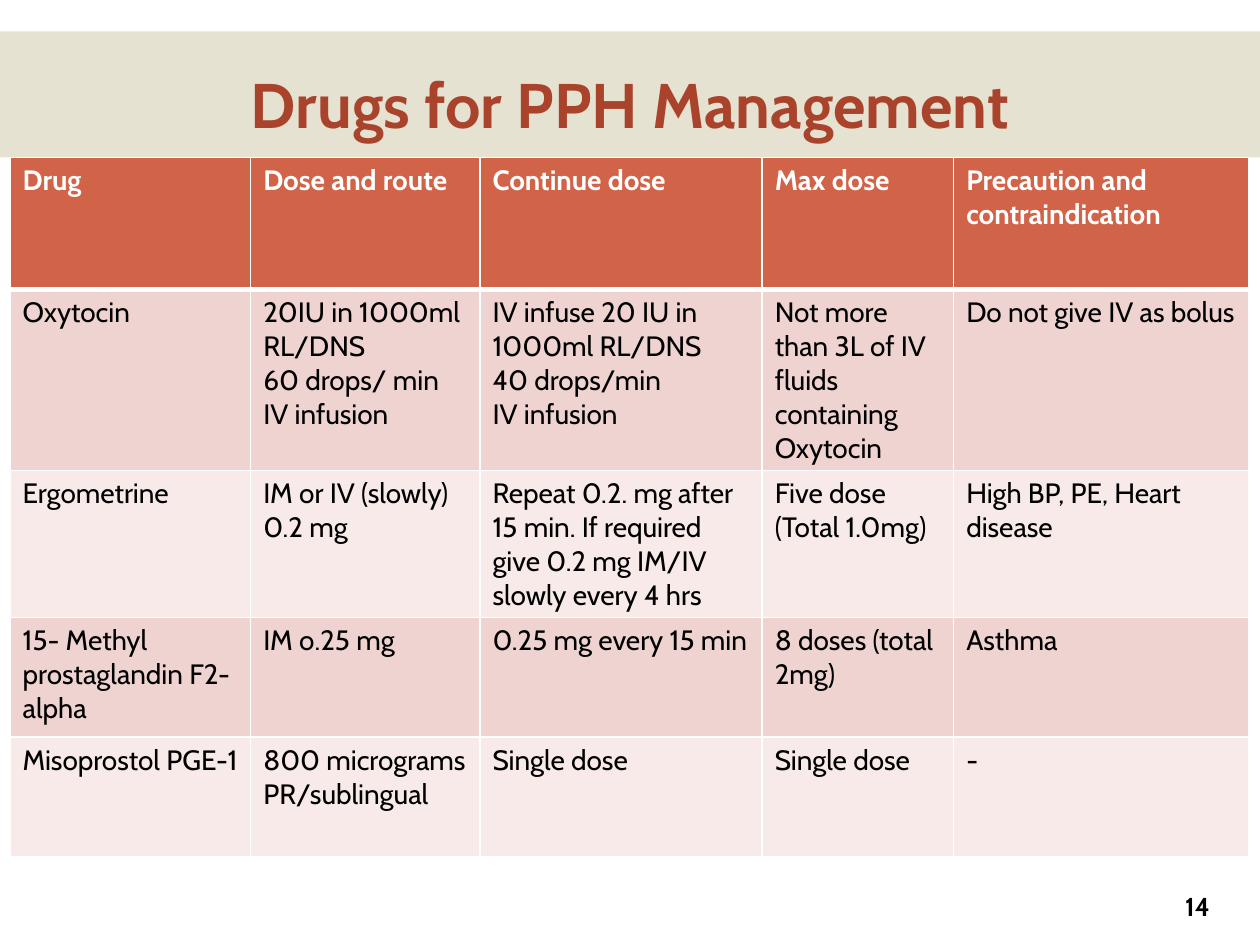
from lxml import etree
from pptx import Presentation
from pptx import util as u
from pptx.dml.color import RGBColor
from pptx.enum import shapes, text
from pptx.oxml import ns

WIDTH, HEIGHT = 10, 7.5
FONT = "Cabin"
WHITE, BLACK = "FFFFFF", "000000"
BAND, TITLE, HEADER = "DDD9C3", "A9432B", "D16349"
STRIPES = ["EED3D0", "F7EAE9"]

COLUMN_WIDTHS = [1.91, 1.82, 2.24, 1.52, 2.34]
ROW_HEIGHTS = [1.05, 1.41, 1.15, 0.95, 0.95]
DRUGS = [
    ["Drug", "Dose and route", "Continue dose", "Max dose",
     "Precaution and contraindication"],
    ["Oxytocin", "20IU in 1000ml RL/DNS\n60 drops/ min\nIV infusion",
     "IV infuse 20 IU in 1000ml RL/DNS\n40 drops/min\nIV infusion",
     "Not more than 3L of IV fluids containing Oxytocin",
     "Do not give IV as bolus"],
    ["Ergometrine", "IM or IV (slowly) 0.2 mg",
     "Repeat 0.2. mg after 15 min. If required give 0.2 mg IM/IV "
     "slowly every 4 hrs",
     "Five dose (Total 1.0mg)", "High BP, PE, Heart disease"],
    ["15- Methyl prostaglandin F2-alpha", "IM o.25 mg",
     "0.25 mg every 15 min", "8 doses (total 2mg)", "Asthma"],
    ["Misoprostol PGE-1", "800 micrograms PR/sublingual", "Single dose",
     "Single dose", "-"],
]


def color(value):
    return RGBColor.from_string(value)


def inches(*lengths):
    return [u.Inches(length) for length in lengths]


def format_text(frame, size, value, bold=False, align=text.PP_ALIGN.LEFT):
    for para in frame.paragraphs:
        para.alignment = align
        for span in para.runs:
            span.font.name = FONT
            span.font.size = u.Pt(size)
            span.font.bold = bold
            span.font.color.rgb = color(value)


def add_band(page):
    band = page.shapes.add_shape(shapes.MSO_SHAPE.RECTANGLE,
                                 *inches(0, 0.25, WIDTH, 1))
    band.shadow.inherit = False
    band.line.fill.background()
    band.fill.solid()
    band.fill.fore_color.rgb = color(BAND)
    # 76 % opacity
    fill = band.fill._xPr.find(ns.qn("a:solidFill"))
    etree.SubElement(fill[0], ns.qn("a:alpha"), val="76000")


def set_title(page, wording):
    title = page.shapes.title
    title.left, title.top, title.width, title.height = inches(
        0.3, 0.25, WIDTH - 0.6, 0.92)
    frame = title.text_frame
    frame.text = wording
    frame.word_wrap = True
    frame.auto_size = text.MSO_AUTO_SIZE.NONE
    frame.vertical_anchor = text.MSO_ANCHOR.BOTTOM
    format_text(frame, 36, TITLE, True, text.PP_ALIGN.CENTER)
    # Keep the title in front of the band
    page.shapes._spTree.append(title._element)


def set_borders(cell, header, below_header):
    properties = cell._tc.get_or_add_tcPr()
    widths = {"lnL": 1, "lnR": 1, "lnT": 3 if below_header else 1,
              "lnB": 3 if header else 1}
    for side, width in widths.items():
        line = etree.SubElement(properties, ns.qn("a:" + side),
                                w=str(u.Pt(width)))
        fill = etree.SubElement(line, ns.qn("a:solidFill"))
        etree.SubElement(fill, ns.qn("a:srgbClr"), val=WHITE)


def add_drug_table(page):
    frame = page.shapes.add_table(
        len(ROW_HEIGHTS), len(COLUMN_WIDTHS),
        *inches(0.08, 1.25, sum(COLUMN_WIDTHS), sum(ROW_HEIGHTS)))
    table = frame.table
    for column, width in zip(table.columns, COLUMN_WIDTHS):
        column.width = u.Inches(width)
    for row, height in zip(table.rows, ROW_HEIGHTS):
        row.height = u.Inches(height)
    for i, entries in enumerate(DRUGS):
        header = i == 0
        for j, entry in enumerate(entries):
            cell = table.cell(i, j)
            cell.text_frame.text = entry
            format_text(cell.text_frame, 16, WHITE if header else BLACK,
                        header)
            set_borders(cell, header, i == 1)
            cell.fill.solid()
            cell.fill.fore_color.rgb = color(
                HEADER if header else STRIPES[(i - 1) % 2])


def add_page_number(page, number):
    box = page.shapes.add_textbox(*inches(8.74, 7.03, 0.96, 0.32))
    frame = box.text_frame
    frame.word_wrap = True
    frame.vertical_anchor = text.MSO_ANCHOR.MIDDLE
    frame.text = str(number)
    format_text(frame, 14.8, BLACK, True, text.PP_ALIGN.RIGHT)


def main():
    deck = Presentation()
    deck.slide_width, deck.slide_height = inches(WIDTH, HEIGHT)
    page = deck.slides.add_slide(deck.slide_layouts.get_by_name("Title Only"))
    add_band(page)
    add_page_number(page, 14)
    add_drug_table(page)
    set_title(page, "Drugs for PPH Management")
    deck.save("out.pptx")


if __name__ == "__main__":
    main()
